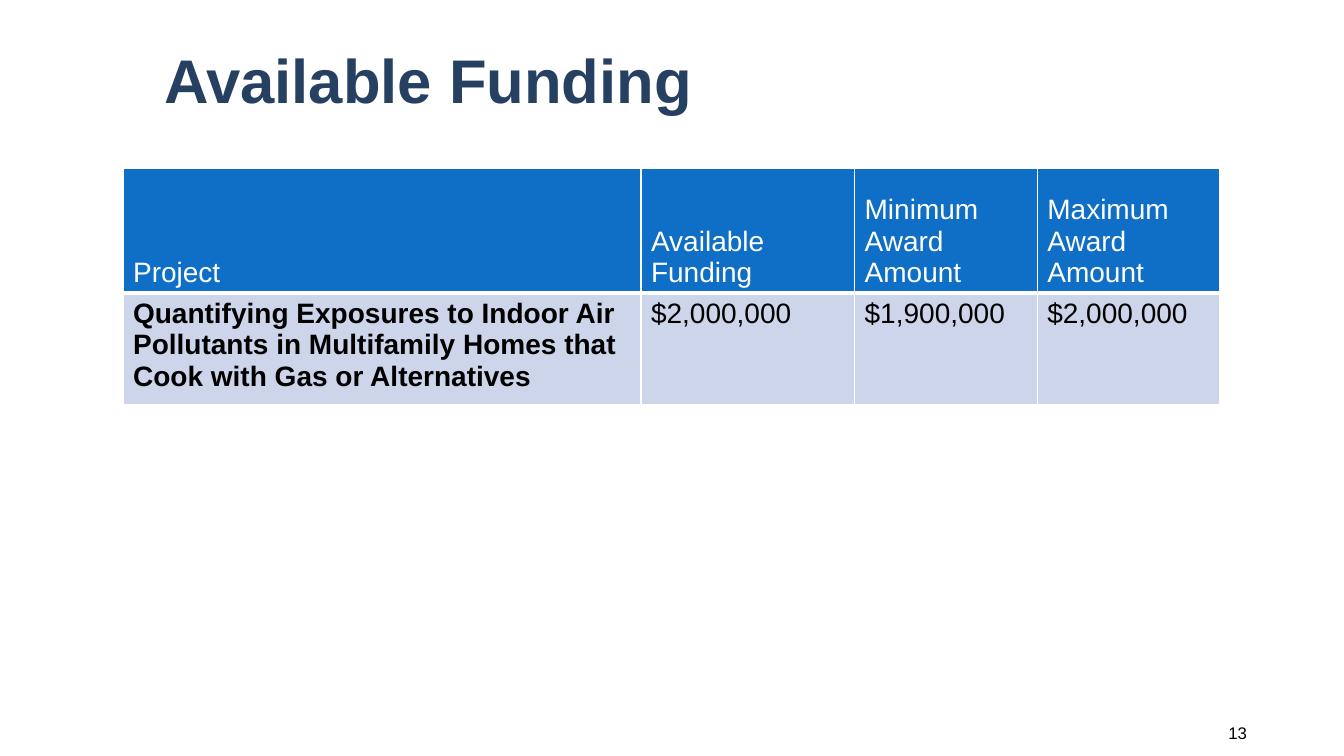
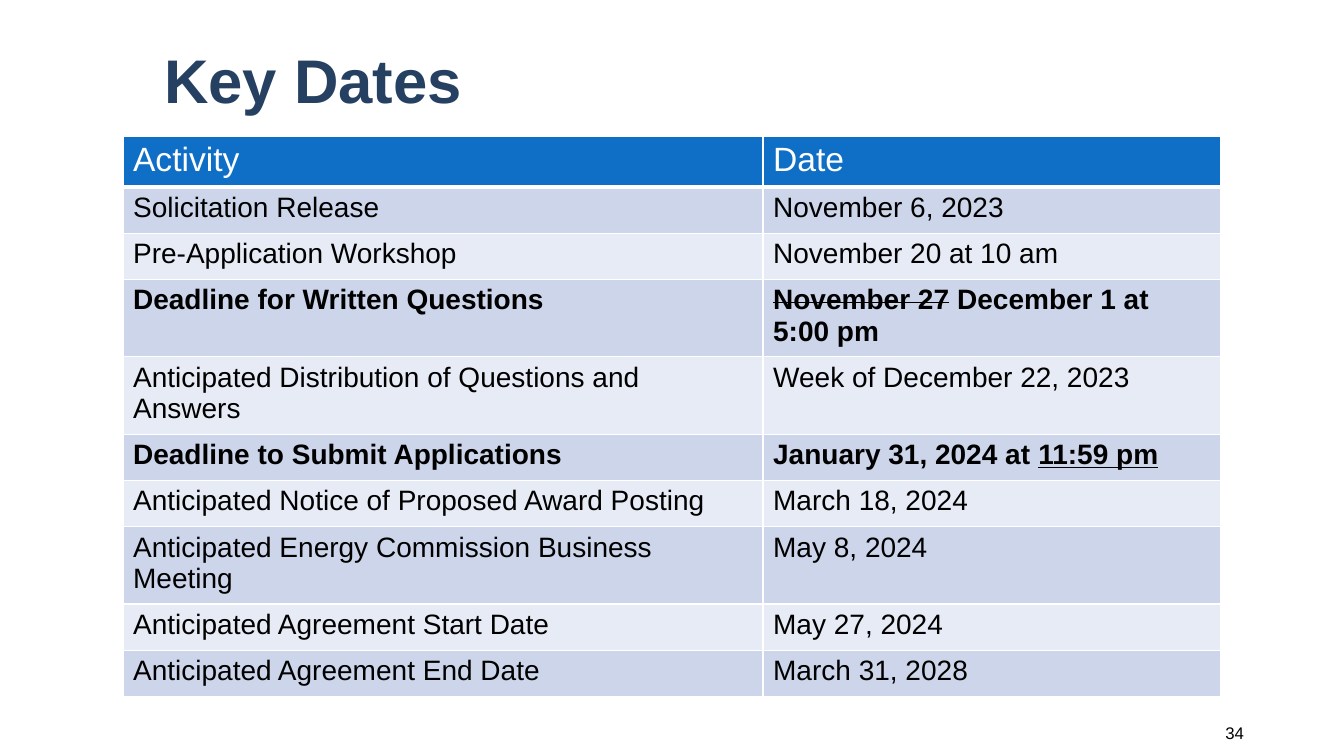
from lxml.etree import SubElement
from pptx import Presentation
from pptx.dml.color import RGBColor
from pptx.enum.text import MSO_ANCHOR, PP_ALIGN
from pptx.oxml.ns import qn
from pptx.util import Pt

FONT = "Arial"
NAVY, BLUE, WHITE, BLACK = "254061", "0F6FC6", "FFFFFF", "000000"
BANDS = ("CCD5EA", "E7EBF5")
TABLE_LEFT = 87.84

# A cell is a plain string or a list of (text, marks) runs.
FUNDING_ROWS = [
    ["Project", "Available Funding", "Minimum Award Amount", "Maximum Award Amount"],
    [
        [("Quantifying Exposures to Indoor Air Pollutants in Multifamily Homes "
          "that Cook with Gas or Alternatives", "bold")],
        "$2,000,000", "$1,900,000", "$2,000,000",
    ],
]
DATE_ROWS = [
    ["Activity", "Date"],
    ["Solicitation Release", "November 6, 2023"],
    ["Pre-Application Workshop", "November 20 at 10 am"],
    [
        [("Deadline for Written Questions", "bold")],
        [("November 27", "bold strike"), (" December 1 at 5:00 pm", "bold")],
    ],
    ["Anticipated Distribution of Questions and Answers", "Week of December 22, 2023"],
    [
        [("Deadline to Submit Applications", "bold")],
        [("January 31, 2024 at ", "bold"), ("11:59 pm", "bold underline")],
    ],
    ["Anticipated Notice of Proposed Award Posting", "March 18, 2024"],
    ["Anticipated Energy Commission Business Meeting", "May 8, 2024"],
    ["Anticipated Agreement Start Date", "May 27, 2024"],
    ["Anticipated Agreement End Date", "March 31, 2028"],
]


def color(value):
    return RGBColor.from_string(value)


def style_font(font, size, value, bold=False):
    font.name = FONT
    font.size = Pt(size)
    font.bold = bold
    font.color.rgb = color(value)


def add_text(slide, text, box, size, value, bold=False, align=PP_ALIGN.LEFT):
    text_frame = slide.shapes.add_textbox(*map(Pt, box)).text_frame
    text_frame.word_wrap = True
    text_frame.vertical_anchor = MSO_ANCHOR.MIDDLE
    text_frame.text = text
    paragraph = text_frame.paragraphs[0]
    paragraph.alignment = align
    style_font(paragraph.runs[0].font, size, value, bold)
    return paragraph


def add_slide(presentation, title, number, number_left):
    """Add a blank slide with its title and page number."""
    slide = presentation.slides.add_slide(presentation.slide_layouts[6])
    heading = add_text(slide, title, (110.16, 18.72, 784.08, 82.08), 44, NAVY, bold=True)
    heading.line_spacing = 0.9
    add_text(slide, number, (number_left, 509.04, 141.84, 28.8), 12, BLACK,
             align=PP_ALIGN.RIGHT)
    return slide


def set_borders(cell, bottom_width):
    properties = cell._tc.get_or_add_tcPr()
    for side, width in (("L", 1), ("R", 1), ("T", 1), ("B", bottom_width)):
        line = SubElement(properties, qn(f"a:ln{side}"), w=str(Pt(width)))
        fill = SubElement(line, qn("a:solidFill"))
        SubElement(fill, qn("a:srgbClr"), val=WHITE)


def fill_cell(cell, content, size, value):
    runs = [(content, "")] if isinstance(content, str) else content
    paragraph = cell.text_frame.paragraphs[0]
    for text, marks in runs:
        run = paragraph.add_run()
        run.text = text
        style_font(run.font, size, value, "bold" in marks)
        if "underline" in marks:
            run.font.underline = True
        if "strike" in marks:
            run._r.get_or_add_rPr().set("strike", "sngStrike")


def add_banded_table(slide, rows, top, widths, heights, header_size, header_anchor):
    frame = slide.shapes.add_table(
        len(rows), len(widths), Pt(TABLE_LEFT), Pt(top), Pt(sum(widths)), Pt(sum(heights)))
    table = frame.table
    for column, width in zip(table.columns, widths):
        column.width = Pt(width)
    for index, (row, height, contents) in enumerate(zip(table.rows, heights, rows)):
        row.height = Pt(height)
        header = index == 0
        for cell, content in zip(row.cells, contents):
            set_borders(cell, 3 if header else 1)
            cell.fill.solid()
            cell.fill.fore_color.rgb = color(BLUE if header else BANDS[(index - 1) % 2])
            cell.vertical_anchor = header_anchor if header else MSO_ANCHOR.TOP
            fill_cell(cell, content, header_size if header else 20,
                      WHITE if header else BLACK)


def main():
    presentation = Presentation()
    presentation.slide_width, presentation.slide_height = Pt(960), Pt(540)

    funding = add_slide(presentation, "Available Funding", "13", 756)
    add_banded_table(funding, FUNDING_ROWS, 120.24, (370, 152.6, 130.5, 130.5),
                     (89.3, 73.5), 20, MSO_ANCHOR.BOTTOM)

    dates = add_slide(presentation, "Key Dates", "34", 753.84)
    add_banded_table(dates, DATE_ROWS, 97.4, (457.2, 326.6),
                     [33.1] * len(DATE_ROWS), 24, MSO_ANCHOR.TOP)

    presentation.save("out.pptx")


if __name__ == "__main__":
    main()
